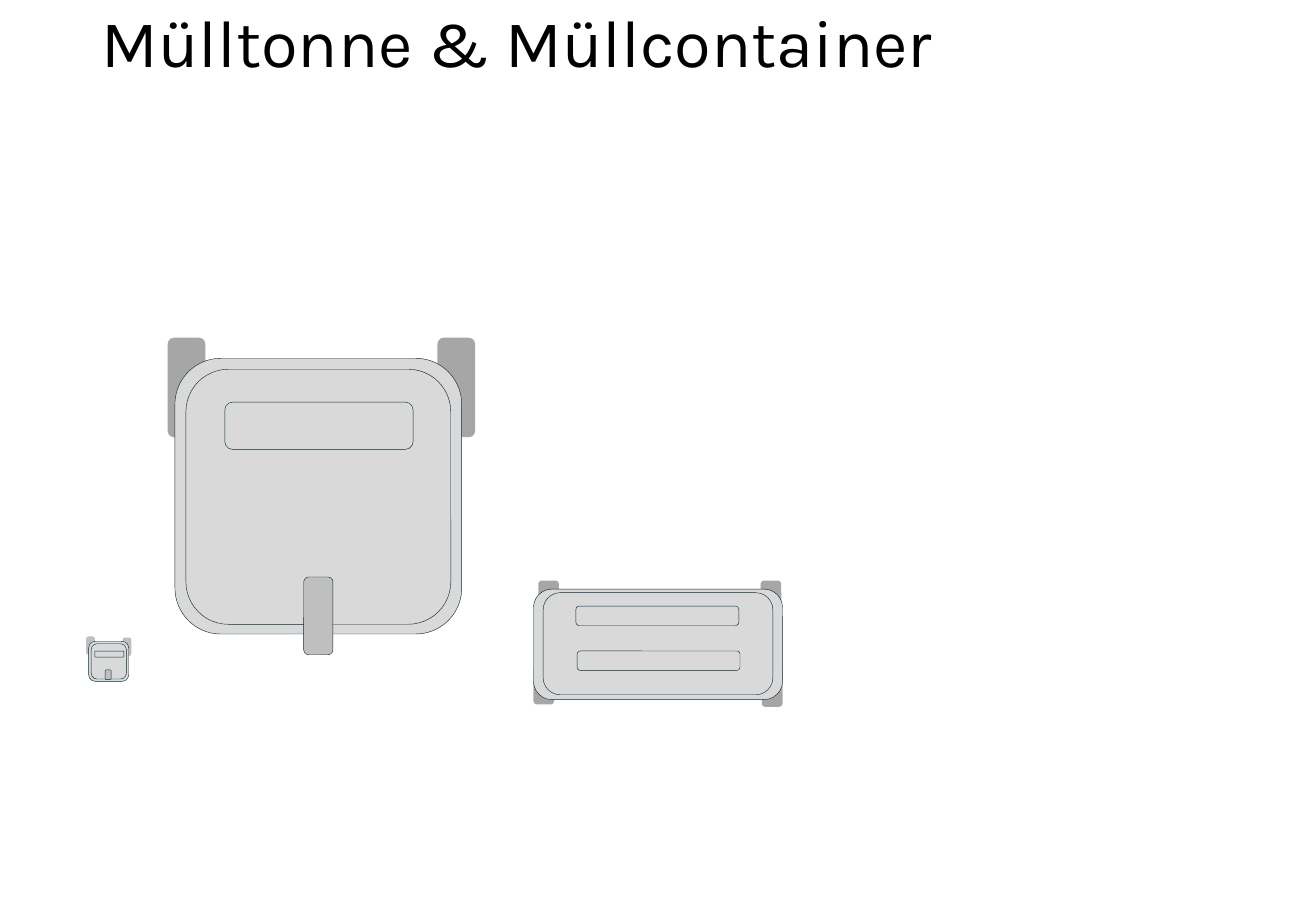
from dataclasses import dataclass

import pptx
import pptx.dml.color
import pptx.enum.shapes
import pptx.enum.text
import pptx.shapes.group
import pptx.slide
import pptx.util

RGBColor = pptx.dml.color.RGBColor
Inches = pptx.util.Inches

BLACK = RGBColor(0x00, 0x00, 0x00)
OUTLINE = RGBColor(0x09, 0x2A, 0x39)
LID_GREY = RGBColor(0xD9, 0xD9, 0xD9)
LIGHT_GREY = RGBColor(0xBF, 0xBF, 0xBF)
WHEEL_GREY = RGBColor(0xA6, 0xA6, 0xA6)


@dataclass(frozen=True)
class Finish:
    fill: RGBColor
    line: RGBColor | None = None
    line_width: float = 0.25


@dataclass(frozen=True)
class Part:
    finish: Finish
    left: float
    top: float
    width: float
    height: float
    rotation: float = 0


LID = Finish(LID_GREY, OUTLINE)
HANDLE = Finish(LIGHT_GREY, OUTLINE)
WHEEL = Finish(WHEEL_GREY)
SMALL_WHEEL = Finish(LIGHT_GREY, LIGHT_GREY, 1.5)

SMALL_BIN = (
    Part(SMALL_WHEEL, 0.72, 5.25, 0.05, 0.13),
    Part(SMALL_WHEEL, 1.02, 5.26, 0.05, 0.13),
    Part(LID, 0.73, 5.28, 0.33, 0.33),
    Part(LID, 0.75, 5.3, 0.29, 0.29),
    Part(HANDLE, 0.85, 5.53, 0.08, 0.05, 270),
    Part(LID, 0.78, 5.36, 0.24, 0.05, 180),
)
LARGE_BIN = (
    *(Part(WHEEL, left, 2.78, 0.31, 0.82) for left in (1.38, 3.6)),
    Part(LID, 1.44, 2.95, 2.36, 2.27),
    Part(LID, 1.53, 3.04, 2.18, 2.1),
    Part(LID, 1.85, 3.31, 1.55, 0.39),
    Part(HANDLE, 2.3, 4.95, 0.64, 0.24, 270),
)
CONTAINER_WHEELS = ((4.39, 5.47), (6.27, 5.49), (4.43, 4.78), (6.26, 4.78))
CONTAINER = (
    *(Part(WHEEL, left, top, 0.17, 0.33) for left, top in CONTAINER_WHEELS),
    Part(LID, 4.39, 4.85, 2.05, 0.91),
    Part(LID, 4.47, 4.88, 1.89, 0.84),
    Part(LID, 4.74, 4.99, 1.34, 0.16),
    Part(LID, 4.75, 5.36, 1.34, 0.16),
)


def draw_part(group: pptx.shapes.group.GroupShape, part: Part) -> None:
    shape = group.shapes.add_shape(
        pptx.enum.shapes.MSO_SHAPE.ROUNDED_RECTANGLE,
        Inches(part.left),
        Inches(part.top),
        Inches(part.width),
        Inches(part.height),
    )
    shape.rotation = part.rotation
    shape.shadow.inherit = False
    shape.fill.solid()
    shape.fill.fore_color.rgb = part.finish.fill
    if part.finish.line is None:
        shape.line.fill.background()
    else:
        shape.line.color.rgb = part.finish.line
        shape.line.width = pptx.util.Pt(part.finish.line_width)


def draw_bin(slide: pptx.slide.Slide, parts: tuple[Part, ...]) -> None:
    group = slide.shapes.add_group_shape()
    for part in parts:
        draw_part(group, part)


def draw_title(slide: pptx.slide.Slide, text: str) -> None:
    title = slide.shapes.add_textbox(
        Inches(0.74), Inches(0.02), Inches(9.34), Inches(0.72)
    )
    frame = title.text_frame
    frame.word_wrap = True
    frame.vertical_anchor = pptx.enum.text.MSO_ANCHOR.MIDDLE
    paragraph = frame.paragraphs[0]
    paragraph.text = text
    paragraph.line_spacing = 0.9
    paragraph.font.name = "Karla"
    paragraph.font.size = pptx.util.Pt(39.6)
    paragraph.font.color.rgb = BLACK


def main() -> None:
    presentation = pptx.Presentation()
    presentation.slide_width = Inches(10.83)
    presentation.slide_height = Inches(7.5)
    slide = presentation.slides.add_slide(presentation.slide_layouts[6])
    for parts in (SMALL_BIN, LARGE_BIN, CONTAINER):
        draw_bin(slide, parts)
    draw_title(slide, "Mülltonne & Müllcontainer")
    presentation.save("out.pptx")


if __name__ == "__main__":
    main()
